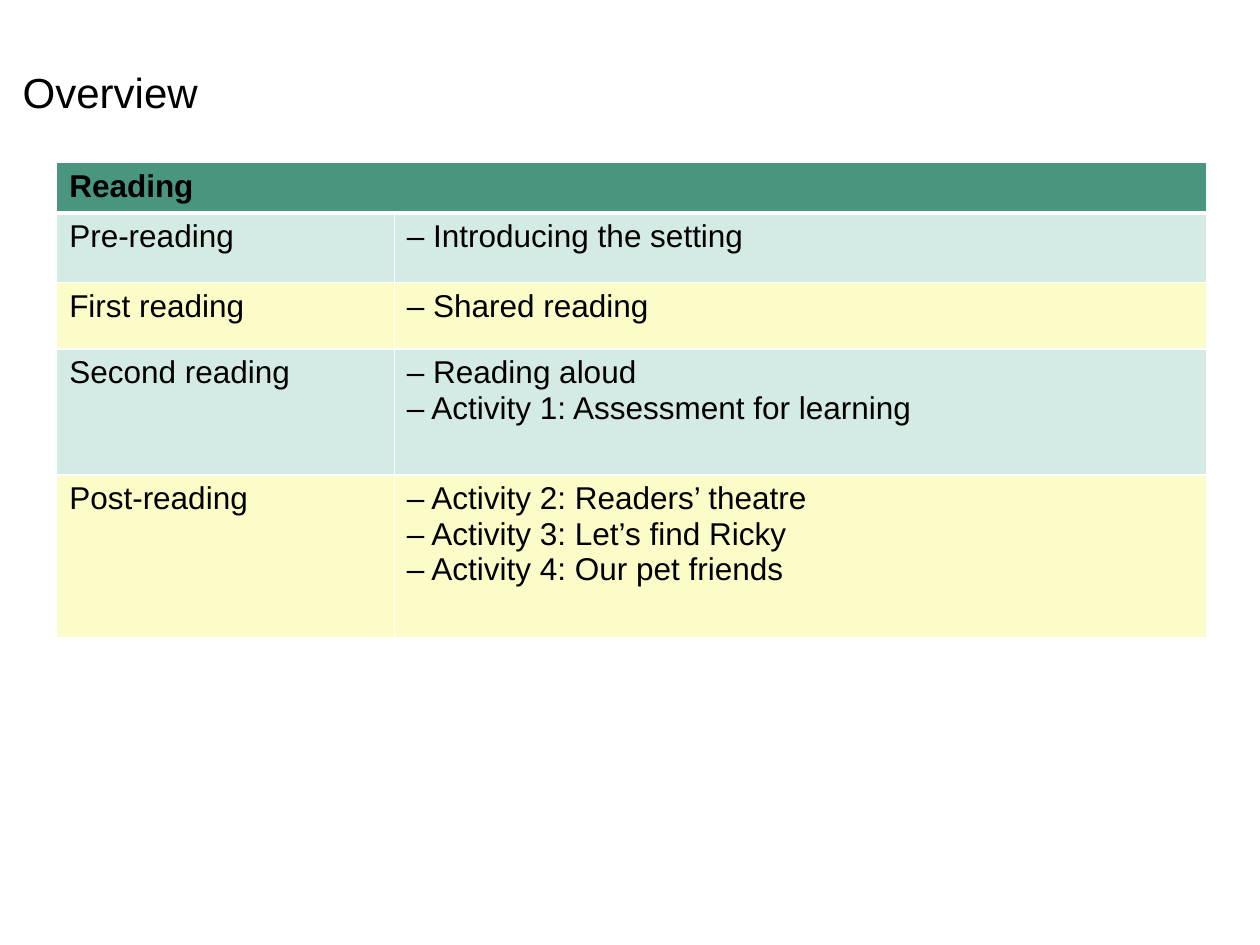
import pptx
import pptx.dml.color
import pptx.enum.text
import pptx.oxml
import pptx.oxml.ns
import pptx.table
import pptx.text.text
import pptx.util
from dataclasses import dataclass

Inches = pptx.util.Inches


@dataclass(frozen=True)
class Theme:
    font: str = "Arial"
    ink: str = "000000"
    line: str = "FFFFFF"
    head: str = "499580"
    green: str = "D4EAE4"
    cream: str = "FBFCC8"
    title: int = 24
    body: int = 18


@dataclass(frozen=True)
class Stage:
    name: str
    steps: tuple[str, ...]
    height: float


THEME = Theme()
WIDTHS = (2.68, 6.45)
HEAD = 0.4
STAGES = (
    Stage("Pre-reading", ("Introducing the setting",), 0.55),
    Stage("First reading", ("Shared reading",), 0.53),
    Stage("Second reading", ("Reading aloud", "Activity 1: Assessment for learning"), 1.0),
    Stage(
        "Post-reading",
        (
            "Activity 2: Readers’ theatre",
            "Activity 3: Let’s find Ricky",
            "Activity 4: Our pet friends",
        ),
        1.29,
    ),
)


def write(frame: pptx.text.text.TextFrame, text: str, *, size: int = THEME.body, bold: bool = False) -> None:
    frame.text = text
    for para in frame.paragraphs:
        para.alignment = pptx.enum.text.PP_ALIGN.LEFT
        font = para.runs[0].font
        font.name = THEME.font
        font.size = pptx.util.Pt(size)
        font.bold = bold
        font.color.rgb = pptx.dml.color.RGBColor.from_string(THEME.ink)


def edge(cell: pptx.table._Cell, side: str, points: int) -> None:
    space = pptx.oxml.ns.nsdecls("a")
    cell._tc.get_or_add_tcPr().append(pptx.oxml.parse_xml(
        f'<a:ln{side} {space} w="{pptx.util.Pt(points)}"><a:solidFill>'
        f'<a:srgbClr val="{THEME.line}"/></a:solidFill></a:ln{side}>'
    ))


def paint(cell: pptx.table._Cell, color: str, *, top: int = 1, base: int = 1) -> None:
    for side, points in (("L", 1), ("R", 1), ("T", top), ("B", base)):
        edge(cell, side, points)
    cell.fill.solid()
    cell.fill.fore_color.rgb = pptx.dml.color.RGBColor.from_string(color)


def main() -> None:
    deck = pptx.Presentation()
    deck.slide_width, deck.slide_height = Inches(10), Inches(7.5)
    slide = deck.slides.add_slide(deck.slide_layouts[5])

    title = slide.shapes.title
    title.left, title.top = Inches(0.08), Inches(0.48)
    title.width, title.height = Inches(1.61), Inches(0.51)
    title.text_frame.auto_size = pptx.enum.text.MSO_AUTO_SIZE.NONE
    title.text_frame.vertical_anchor = pptx.enum.text.MSO_ANCHOR.TOP
    write(title.text_frame, "Overview", size=THEME.title)

    heights = (HEAD, *(stage.height for stage in STAGES))
    table = slide.shapes.add_table(
        len(heights), len(WIDTHS), Inches(0.45), Inches(1.29), Inches(sum(WIDTHS)), Inches(sum(heights))
    ).table
    table.horz_banding = False
    for column, width in zip(table.columns, WIDTHS):
        column.width = Inches(width)
    for row, height in zip(table.rows, heights):
        row.height = Inches(height)

    table.cell(0, 0).merge(table.cell(0, 1))
    write(table.cell(0, 0).text_frame, "Reading", bold=True)
    for cell in table.rows[0].cells:
        paint(cell, THEME.head, base=3)

    for index, stage in enumerate(STAGES, 1):
        color = THEME.green if index % 2 else THEME.cream
        steps = "\n".join(f"– {step}" for step in stage.steps)
        for cell, text in zip(table.rows[index].cells, (stage.name, steps)):
            write(cell.text_frame, text)
            paint(cell, color, top=3 if index == 1 else 1)

    deck.save("out.pptx")


if __name__ == "__main__":
    main()
